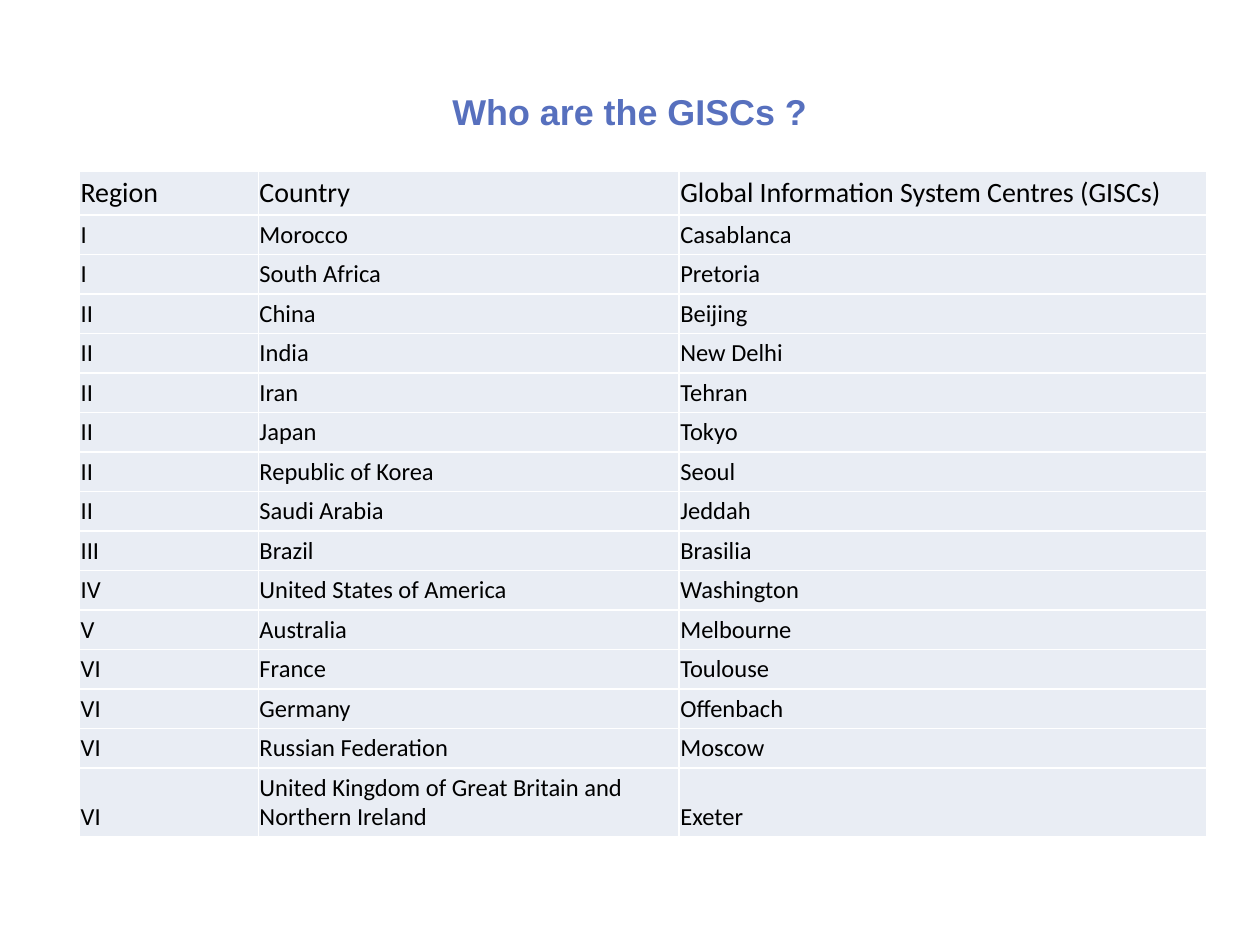
from dataclasses import dataclass

from lxml.etree import SubElement
from pptx import Presentation
from pptx.dml.color import RGBColor as RGB
from pptx.enum.text import MSO_ANCHOR as Anchor, PP_ALIGN as Align
from pptx.oxml.ns import qn
from pptx.util import Inches, Pt


@dataclass(frozen=True)
class Theme:
    title_color: RGB = RGB(0x57, 0x70, 0xBE)
    text_color: RGB = RGB(0, 0, 0)
    cell_fill: RGB = RGB(0xE9, 0xED, 0xF4)
    border_color: str = "FFFFFF"
    border_width: int = Pt(1)
    title_font: str = "Arial"
    table_font: str = "Calibri"
    title_size: int = Pt(20.5)
    header_size: int = Pt(16)
    body_size: int = Pt(14)


def apply_format(target, values):
    for attribute, value in values.items():
        setattr(target, attribute, value)


class SlideBuilder:
    def __init__(self, slide, theme):
        self.slide = slide
        self.theme = theme

    def add_text(self, paragraph, text, color, **font_format):
        run = paragraph.add_run()
        run.text = text
        apply_format(run.font, font_format)
        run.font.color.rgb = color

    def title(self, text, left, top, width, height):
        box = self.slide.shapes.add_textbox(
            Inches(left), Inches(top), Inches(width), Inches(height))
        frame = box.text_frame
        apply_format(frame, {"word_wrap": True, "vertical_anchor": Anchor.MIDDLE})
        heading = frame.paragraphs[0]
        heading.alignment = Align.CENTER
        self.add_text(heading, text, self.theme.title_color, bold=True,
                      name=self.theme.title_font, size=self.theme.title_size)

    def border(self, cell):
        properties = cell._tc.get_or_add_tcPr()
        for position, side in enumerate(("a:lnL", "a:lnR", "a:lnT", "a:lnB")):
            line = SubElement(properties, qn(side), w=str(self.theme.border_width))
            fill = SubElement(line, qn("a:solidFill"))
            SubElement(fill, qn("a:srgbClr"), val=self.theme.border_color)
            properties.insert(position, line)  # borders come before the fill

    def cell(self, cell, text, size):
        apply_format(cell, {
            "vertical_anchor": Anchor.BOTTOM,
            "margin_left": Inches(0.01), "margin_right": Inches(0.01),
            "margin_top": Inches(0.04), "margin_bottom": Inches(0.04),
        })
        cell.fill.solid()
        cell.fill.fore_color.rgb = self.theme.cell_fill
        self.border(cell)
        self.add_text(cell.text_frame.paragraphs[0], text, self.theme.text_color,
                      name=self.theme.table_font, size=size)

    def table(self, records, left, top, widths, heights):
        table = self.slide.shapes.add_table(
            len(records), len(widths), Inches(left), Inches(top),
            Inches(sum(widths)), Inches(sum(heights))).table
        apply_format(table, {"first_row": False, "horz_banding": False})
        for column, width in zip(table.columns, widths):
            column.width = Inches(width)
        for row_index, (row, height) in enumerate(zip(table.rows, heights)):
            row.height = Inches(height)
            size = self.theme.body_size if row_index else self.theme.header_size
            for cell, text in zip(row.cells, records[row_index]):
                self.cell(cell, text, size)


CENTRES = [
    ("Region", "Country", "Global Information System Centres (GISCs)"),
    ("I", "Morocco", "Casablanca"),
    ("I", "South Africa", "Pretoria"),
    ("II", "China", "Beijing"),
    ("II", "India", "New Delhi"),
    ("II", "Iran", "Tehran"),
    ("II", "Japan", "Tokyo"),
    ("II", "Republic of Korea", "Seoul"),
    ("II", "Saudi Arabia", "Jeddah"),
    ("III", "Brazil", "Brasilia"),
    ("IV", "United States of America", "Washington"),
    ("V", "Australia", "Melbourne"),
    ("VI", "France", "Toulouse"),
    ("VI", "Germany", "Offenbach"),
    ("VI", "Russian Federation", "Moscow"),
    ("VI", "United Kingdom of Great Britain and Northern Ireland", "Exeter"),
]


def main():
    deck = Presentation()
    apply_format(deck, {"slide_width": Inches(10), "slide_height": Inches(7.5)})
    builder = SlideBuilder(deck.slides.add_slide(deck.slide_layouts[6]), Theme())

    # Heading
    builder.title("Who are the GISCs ?", 1.82, 0.54, 6.36, 0.69)

    # Centres by region: header, even rows, taller two-line last row
    row_heights = [0.25] + [0.3] * (len(CENTRES) - 2) + [0.51]
    builder.table(CENTRES, 0.63, 1.36, [1.42, 3.34, 4.19], row_heights)

    deck.save("out.pptx")


if __name__ == "__main__":
    main()
